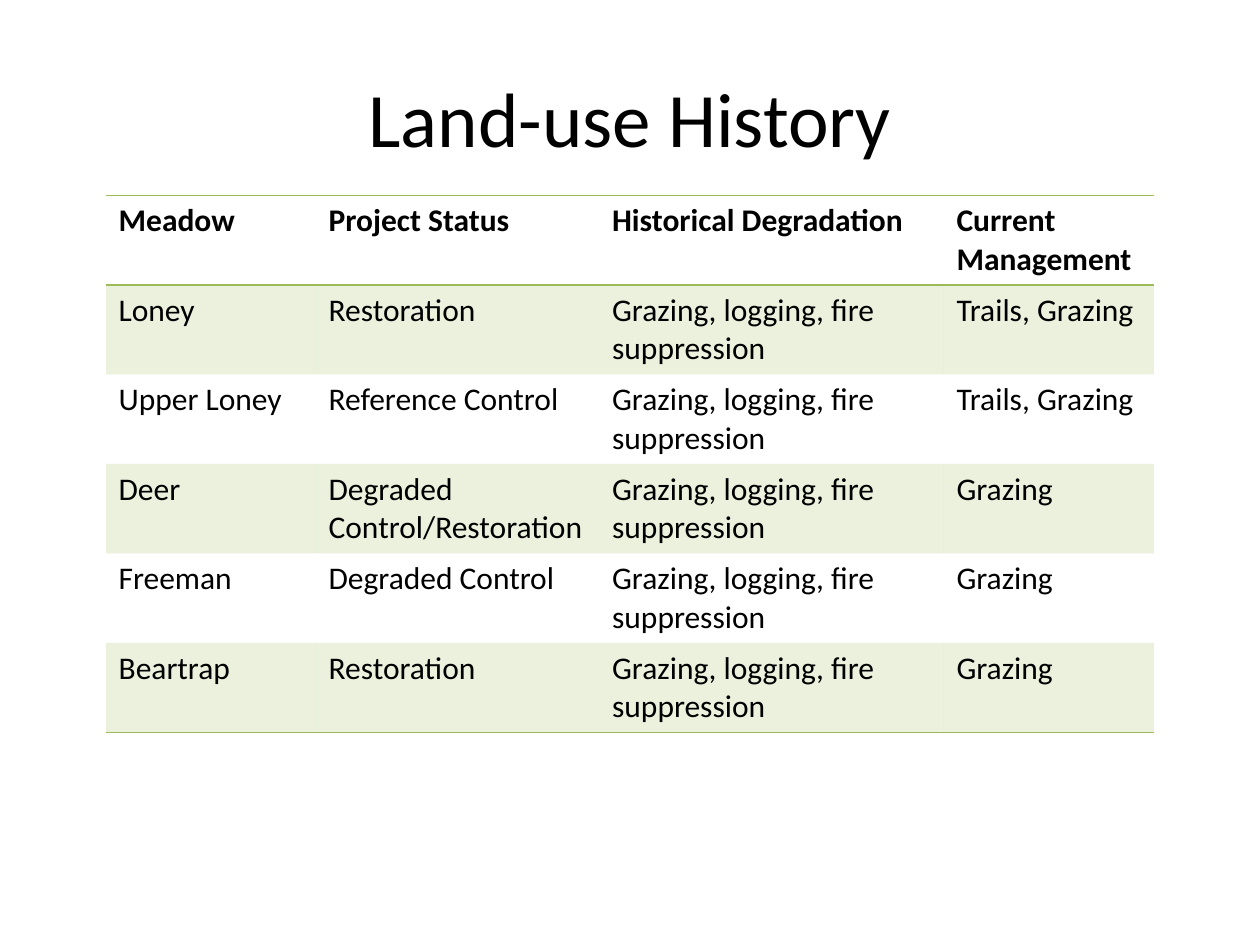
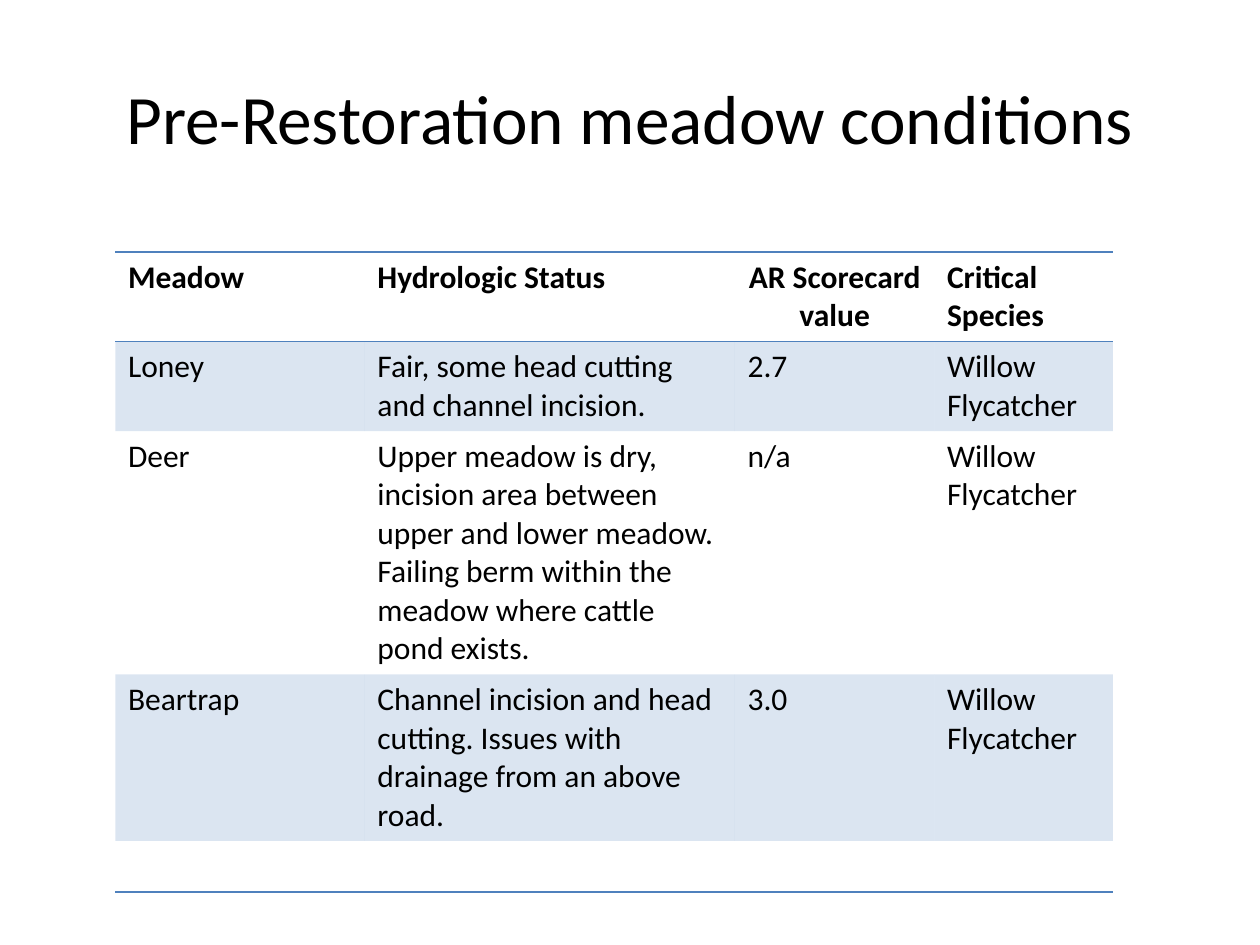
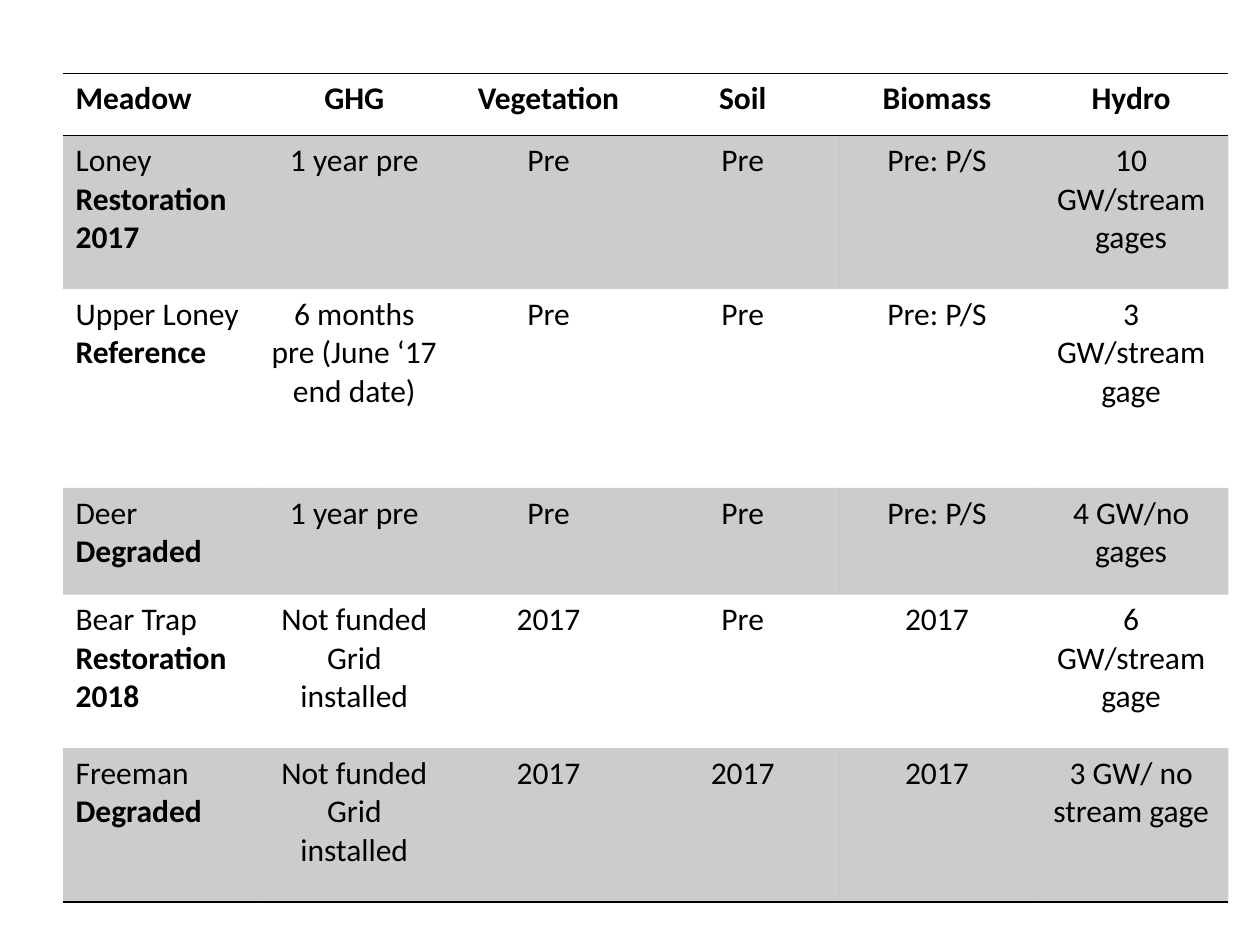
"""Builds three slides of meadow tables."""
from lxml.etree import SubElement as Sub
from pptx import Presentation as Deck
from pptx.dml.color import RGBColor as Rgb
from pptx.enum.text import MSO_ANCHOR as Anchor, MSO_AUTO_SIZE as Fit, PP_ALIGN as Align
from pptx.oxml import parse_xml as from_xml
from pptx.oxml.ns import nsdecls, qn
from pptx.util import Pt

HUES = {"ink": "000000", "green": "9BBB59", "blue": "4F81BD"}
FONT = "Calibri"
PLAIN = "{2D5ABB26-0587-4C30-8999-92F81FD0307C}"
TITLED, BLANK = 5, 6
LOW = 29.2

CAUSE = "Grazing, logging, fire suppression"
BIRD = "Willow Flycatcher"
NO_FUND = "Not funded\nGrid installed"

LAND = [
    ("Meadow", "Project Status", "Historical Degradation", "Current Management"),
    ("Loney", "Restoration", CAUSE, "Trails, Grazing"),
    ("Upper Loney", "Reference Control", CAUSE, "Trails, Grazing"),
    ("Deer", "Degraded Control/Restoration", CAUSE, "Grazing"),
    ("Freeman", "Degraded Control", CAUSE, "Grazing"),
    ("Beartrap", "Restoration", CAUSE, "Grazing"),
]
STATE = [
    ("Meadow", "Hydrologic Status", "AR Scorecard value", "Critical Species"),
    ("Loney", "Fair, some head cutting and channel incision.", "2.7", BIRD),
    ("Deer", "Upper meadow is dry, incision area between upper and lower meadow. "
     "Failing berm within the meadow where cattle pond exists.", "n/a", BIRD),
    ("Beartrap", "Channel incision and head cutting. "
     "Issues with drainage from an above road.", "3.0", BIRD),
    ("", "", "", ""),
]
WORK = [
    ("Meadow", "GHG", "Vegetation", "Soil", "Biomass", "Hydro"),
    ("Loney\nRestoration\n2017", "1 year pre", "Pre", "Pre", "Pre: P/S",
     "10 GW/stream gages"),
    ("Upper Loney\nReference", "6 months pre (June ‘17 end date)", "Pre", "Pre",
     "Pre: P/S", "3 GW/stream gage"),
    ("Deer\nDegraded", "1 year pre", "Pre", "Pre", "Pre: P/S", "4 GW/no gages"),
    ("Bear Trap\nRestoration\n2018", NO_FUND, "2017", "Pre", "2017",
     "6 GW/stream gage"),
    ("Freeman\nDegraded", NO_FUND, "2017", "2017", "2017", "3 GW/ no stream gage"),
]


def write(frame, text, size=18, align=Align.LEFT, strong=None):
    """Fill a frame line by line, bold from line number strong on."""
    for i, line in enumerate(text.split("\n")):
        par = frame.paragraphs[0] if i == 0 else frame.add_paragraph()
        par.alignment = align
        if line:
            run = par.add_run()
            run.text = line
            run.font.name, run.font.size = FONT, Pt(size)
            run.font.bold = strong is not None and i >= strong
            run.font.color.rgb = Rgb.from_string(HUES["ink"])


def head(slide, text, size=44):
    """Place and write the title."""
    title = slide.shapes.title
    title.left, title.top, title.width, title.height = map(Pt, (36, 21.6, 648, 90))
    frame = title.text_frame
    frame.auto_size, frame.vertical_anchor = Fit.NONE, Anchor.MIDDLE
    write(frame, text, size=size, align=Align.CENTER)


def tint(cell, hue):
    """Give a cell a fifth of a hue."""
    cell.fill.solid()
    cell.fill.fore_color.rgb = Rgb.from_string(hue)
    tone = cell._tc.tcPr.find(".//" + qn("a:srgbClr"))
    Sub(tone, qn("a:alpha"), val="20000")


def rule(cell, hue, sides):
    """Draw one-point lines on the given sides of a cell."""
    for i, side in enumerate(sides):
        line = from_xml(
            f'<a:ln{side} {nsdecls("a")} w="12700"><a:solidFill>'
            f'<a:srgbClr val="{hue}"/></a:solidFill></a:ln{side}>')
        cell._tc.get_or_add_tcPr().insert(i, line)


def grid(slide, data, left, top, cols, rows, hue, mid):
    """Add a ruled table with tinted odd rows; mid(r, c) tells centred cells."""
    box = map(Pt, (left, top, sum(cols), sum(rows)))
    table = slide.shapes.add_table(len(rows), len(cols), *box).table
    table._tbl.tblPr.find(qn("a:tableStyleId")).text = PLAIN
    table.horz_banding = False
    for col, width in zip(table.columns, cols):
        col.width = Pt(width)
    for r, texts in enumerate(data):
        table.rows[r].height = Pt(rows[r])
        for c, text in enumerate(texts):
            cell = table.cell(r, c)
            write(cell.text_frame, text,
                  align=Align.CENTER if mid(r, c) else Align.LEFT,
                  strong=0 if r == 0 else 1 if c == 0 else None)
            if r % 2:
                tint(cell, HUES[hue])
            else:
                cell.fill.background()
            if r == 0:
                rule(cell, HUES[hue], "TB")
            elif r == len(data) - 1:
                rule(cell, HUES[hue], "B")


def main():
    """Build and save the deck."""
    deck = Deck()
    deck.slide_width, deck.slide_height = Pt(720), Pt(540)
    land, state, work = (deck.slides.add_slide(deck.slide_layouts[n])
                         for n in (TITLED, TITLED, BLANK))

    head(land, "Land-use History")
    grid(land, LAND, 60.6, 111.6, (120, 162, 196.8, 120), [LOW] * 6,
         "green", lambda r, c: False)

    head(state, "Pre-Restoration meadow conditions", size=39.6)
    grid(state, STATE, 66, 144, (142.5, 211.5, 114, 102), [LOW] * 5,
         "blue", lambda r, c: (r, c) == (0, 2))

    grid(work, WORK, 36, 42, [111] * 6, (35.3, 87.8, 113.7, 61, 87.8, 87.8),
         "ink", lambda r, c: c > 0)
    deck.save("out.pptx")


if __name__ == "__main__":
    main()
